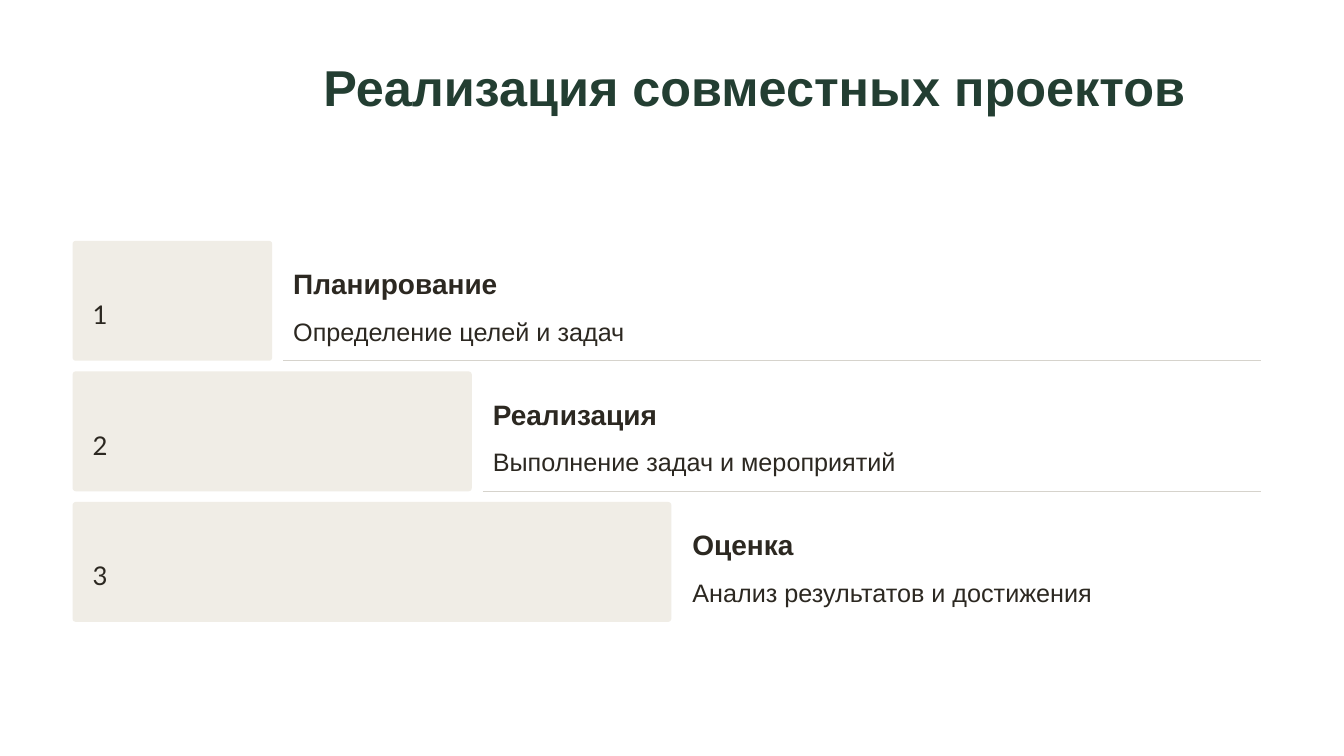
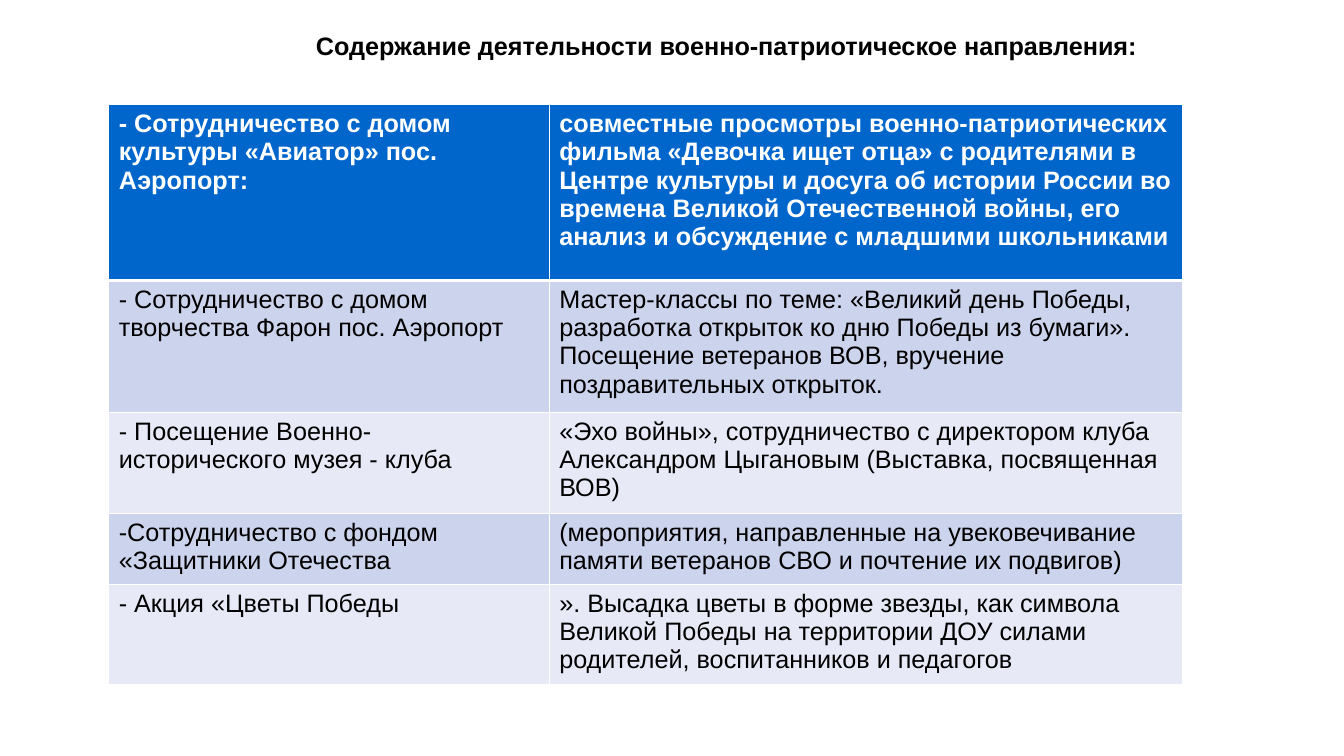
from dataclasses import dataclass

from lxml import etree
from pptx import Presentation
from pptx.dml.color import RGBColor
from pptx.enum.shapes import MSO_CONNECTOR, MSO_SHAPE
from pptx.enum.text import MSO_ANCHOR, MSO_AUTO_SIZE, PP_ALIGN
from pptx.oxml.ns import qn
from pptx.util import Cm, Pt

LEFT, CENTER = PP_ALIGN.LEFT, PP_ALIGN.CENTER
TOP = MSO_ANCHOR.TOP
NO_AUTOFIT = MSO_AUTO_SIZE.NONE
ROUNDED, STRAIGHT = MSO_SHAPE.ROUNDED_RECTANGLE, MSO_CONNECTOR.STRAIGHT

GREEN, INK, SAND, RULE = "233E32", "2C2821", "F0EDE6", "D6D3CC"
BLACK, WHITE, BLUE = "000000", "FFFFFF", "0066CC"
BANDS = ("CCD3EC", "E7EAF6")
TITLE_ONLY = 5

STEP_LEFT, STEP_TOP, STEP_PITCH = 1.83, 6.07, 3.29
STEP_WIDTH, STEP_HEIGHT = 5.03, 3.02
RULE_GAP, TEXT_GAP, RULE_RIGHT = 0.28, 0.53, 31.78
TEXT_WIDTH = 12

COLUMN_WIDTHS = (11.1, 15.95)
ROW_HEIGHTS = (4.43, 3.32, 2.54, 1.79, 2.54)


@dataclass(frozen=True)
class TextStyle:
    """Look of one kind of text."""
    size: float
    color: str
    bold: bool = False
    font: str = "Arial"
    align: PP_ALIGN = LEFT
    spacing: float | None = None


@dataclass(frozen=True)
class Box:
    """Position and size in centimetres."""
    left: float
    top: float
    width: float
    height: float

    def lengths(self) -> tuple:
        """Return the four values as lengths."""
        return Cm(self.left), Cm(self.top), Cm(self.width), Cm(self.height)


@dataclass(frozen=True)
class Step:
    """One stage of a project."""
    heading: str
    description: str


PROJECT_TITLE = TextStyle(36, GREEN, True, spacing=55.5)
CONTENT_TITLE = TextStyle(18, BLACK, True, align=CENTER)
NUMBER = TextStyle(18.4, INK, font="Lato", align=CENTER, spacing=35.5)
HEADING = TextStyle(20, INK, True, spacing=27.5)
DESCRIPTION = TextStyle(18, INK, spacing=28.5)
TABLE_HEAD = TextStyle(18, WHITE, True)
TABLE_BODY = TextStyle(18, BLACK)

STEPS = (
    Step("Планирование", "Определение целей и задач"),
    Step("Реализация", "Выполнение задач и мероприятий"),
    Step("Оценка", "Анализ результатов и достижения"),
)

ACTIVITIES = (
    ("- Сотрудничество с домом культуры «Авиатор» пос. Аэропорт:",
     "совместные просмотры военно-патриотических фильма «Девочка ищет отца» с родителями "
     "в Центре культуры и досуга об истории России во времена Великой Отечественной войны, "
     "его анализ и обсуждение с младшими школьниками"),
    ("- Сотрудничество с домом творчества Фарон пос. Аэропорт",
     "Мастер-классы по теме: «Великий день Победы, разработка открыток ко дню Победы из "
     "бумаги». Посещение ветеранов ВОВ, вручение поздравительных открыток."),
    ("- Посещение Военно-исторического музея - клуба",
     "«Эхо войны», сотрудничество с директором клуба Александром Цыгановым "
     "(Выставка, посвященная ВОВ)"),
    ("-Сотрудничество с фондом «Защитники Отечества",
     "(мероприятия, направленные на увековечивание памяти ветеранов СВО и почтение их "
     "подвигов)"),
    ("- Акция «Цветы Победы",
     "». Высадка цветы в форме звезды, как символа Великой Победы на территории ДОУ "
     "силами родителей, воспитанников и педагогов"),
)


def rgb(value: str) -> RGBColor:
    """Turn a hex string into a colour."""
    return RGBColor.from_string(value)


def write(frame, text: str, style: TextStyle) -> None:
    """Put one styled paragraph into a text frame."""
    frame.text = text
    paragraph = frame.paragraphs[0]
    paragraph.alignment = style.align
    if style.spacing:
        paragraph.line_spacing = Pt(style.spacing)
    font = paragraph.runs[0].font
    formats = {"name": style.font, "size": Pt(style.size), "bold": style.bold}
    for name, value in formats.items():
        setattr(font, name, value)
    font.color.rgb = rgb(style.color)


def format_frame(frame, wrap: bool = True) -> None:
    """Strip margins and fix the anchor and wrapping of a text frame."""
    formats = {"margin_left": 0, "margin_right": 0, "margin_top": 0, "margin_bottom": 0,
               "word_wrap": wrap, "vertical_anchor": TOP, "auto_size": NO_AUTOFIT}
    for name, value in formats.items():
        setattr(frame, name, value)


def add_titled_slide(deck, text: str, box: Box, style: TextStyle):
    """Add a title-only slide with its title placed and formatted."""
    slide = deck.slides.add_slide(deck.slide_layouts[TITLE_ONLY])
    title = slide.shapes.title
    title.left, title.top, title.width, title.height = box.lengths()
    format_frame(title.text_frame)
    write(title.text_frame, text, style)
    return slide


def add_text(slide, text: str, box: Box, style: TextStyle, wrap: bool = True) -> None:
    """Add a text box without margins."""
    frame = slide.shapes.add_textbox(*box.lengths()).text_frame
    format_frame(frame, wrap)
    write(frame, text, style)


def add_bar(slide, box: Box) -> None:
    """Add a slightly rounded bar."""
    bar = slide.shapes.add_shape(ROUNDED, *box.lengths())
    bar.adjustments[0] = 0.026
    bar.shadow.inherit = False
    bar.fill.solid()
    bar.fill.fore_color.rgb = rgb(SAND)
    bar.line.fill.background()


def add_rule(slide, left: float, right: float, top: float) -> None:
    """Add a thin horizontal rule."""
    rule = slide.shapes.add_connector(STRAIGHT, Cm(left), Cm(top), Cm(right), Cm(top))
    rule.line.color.rgb = rgb(RULE)
    rule.line.width = Pt(0.75)
    etree.SubElement(rule._element.spPr, qn("a:effectLst"))


def add_step(slide, index: int, step: Step) -> None:
    """Add one stage with its bar, number, texts and rule."""
    top = STEP_TOP + index * STEP_PITCH
    width = STEP_WIDTH * (index + 1)
    bar_right = STEP_LEFT + width
    text_left = bar_right + TEXT_GAP
    add_bar(slide, Box(STEP_LEFT, top, width, STEP_HEIGHT))
    add_text(slide, str(index + 1), Box(2.36, top + 0.99, 0.33, 1.04), NUMBER, wrap=False)
    add_text(slide, step.heading, Box(text_left, top + 0.53, TEXT_WIDTH, 0.81), HEADING)
    add_text(slide, step.description, Box(text_left, top + 1.65, TEXT_WIDTH, 0.84), DESCRIPTION)
    if index < len(STEPS) - 1:
        add_rule(slide, bar_right + RULE_GAP, RULE_RIGHT, top + STEP_HEIGHT)


def add_borders(cell, widths: dict[str, float]) -> None:
    """Draw white cell borders, with widths in points by side."""
    properties = cell._tc.get_or_add_tcPr()
    for side, width in widths.items():
        line = etree.SubElement(properties, qn(f"a:ln{side}"), w=str(Pt(width)))
        fill = etree.SubElement(line, qn("a:solidFill"))
        etree.SubElement(fill, qn("a:srgbClr"), val=WHITE)


def add_activity_table(slide) -> None:
    """Add the table of activities."""
    box = Box(2.74, 2.64, sum(COLUMN_WIDTHS), sum(ROW_HEIGHTS))
    table = slide.shapes.add_table(len(ACTIVITIES), len(COLUMN_WIDTHS), *box.lengths()).table
    for column, width in zip(table.columns, COLUMN_WIDTHS):
        column.width = Cm(width)
    for index, (height, texts) in enumerate(zip(ROW_HEIGHTS, ACTIVITIES)):
        row = table.rows[index]
        row.height = Cm(height)
        is_head = index == 0
        borders = {"L": 1, "R": 1, "T": 3 if index == 1 else 1, "B": 3 if is_head else 1}
        for cell, text in zip(row.cells, texts):
            write(cell.text_frame, text, TABLE_HEAD if is_head else TABLE_BODY)
            add_borders(cell, borders)
            cell.fill.solid()
            cell.fill.fore_color.rgb = rgb(BLUE if is_head else BANDS[(index - 1) % 2])


def build_projects(deck) -> None:
    """Build the slide with the project stages."""
    slide = add_titled_slide(deck, "Реализация совместных проектов",
                             Box(8.15, 0.97, 22.5, 1.65), PROJECT_TITLE)
    for index, step in enumerate(STEPS):
        add_step(slide, index, step)


def build_activities(deck) -> None:
    """Build the slide with the table of activities."""
    slide = add_titled_slide(deck, "Содержание деятельности военно-патриотическое направления:",
                             Box(5.57, 0.77, 25.48, 0.77), CONTENT_TITLE)
    add_activity_table(slide)


def main() -> None:
    """Build and save the presentation."""
    deck = Presentation()
    deck.slide_width, deck.slide_height = Cm(33.87), Cm(19.05)
    build_projects(deck)
    build_activities(deck)
    deck.save("out.pptx")


if __name__ == "__main__":
    main()
